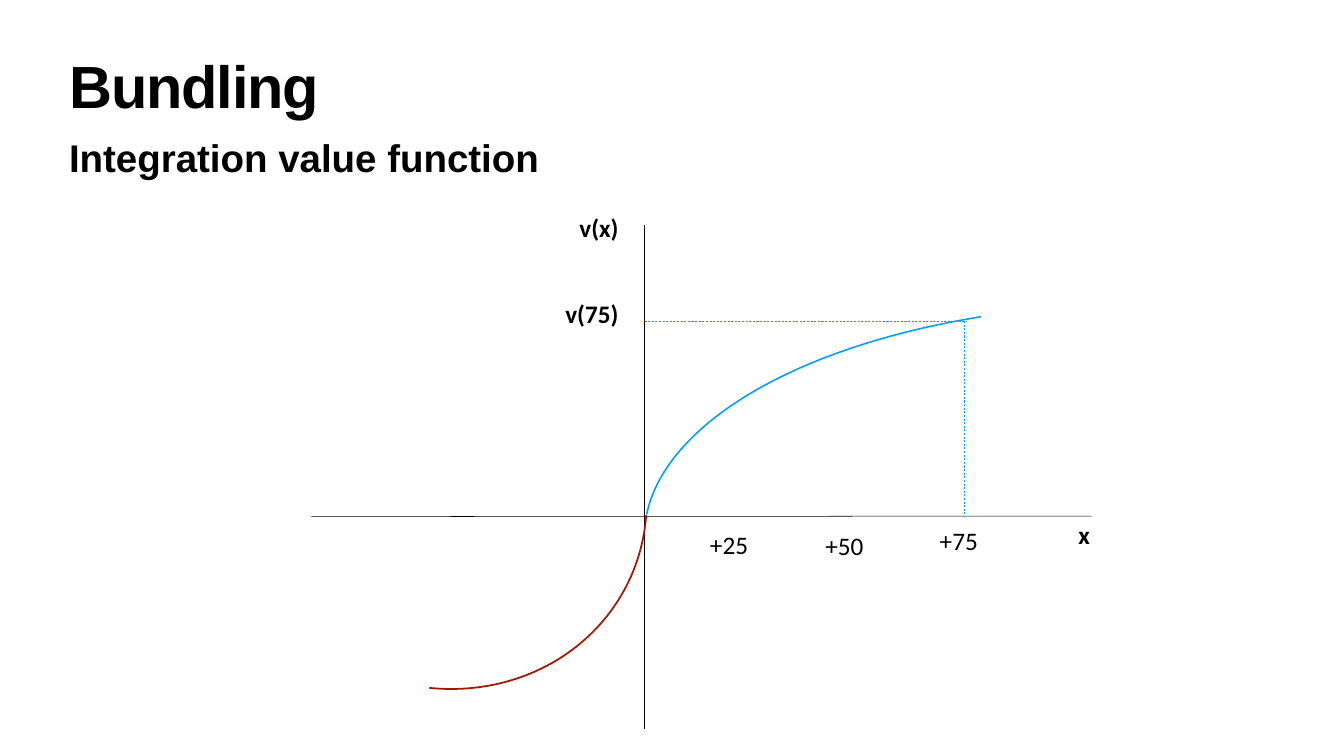
import pptx
import pptx.util
import pptx.dml.color
import pptx.enum.dml
import pptx.enum.shapes
import pptx.enum.text
import pptx.oxml

Inches = pptx.util.Inches
Pt = pptx.util.Pt
BLACK, BLUE, RED = "000000", "009EF9", "A61500"


def color(hex_string):
    return pptx.dml.color.RGBColor.from_string(hex_string)


def add_text(slide, text, place, size, font, bold, inset=0.1, wrap=True):
    box = slide.shapes.add_textbox(*[Inches(length) for length in place])
    frame = box.text_frame
    frame.word_wrap = wrap
    frame.vertical_anchor = pptx.enum.text.MSO_ANCHOR.TOP
    frame.margin_left = frame.margin_right = Inches(inset)
    frame.margin_top = frame.margin_bottom = Inches(min(inset, 0.06) if inset < 0.1 else 0.05)
    para = frame.paragraphs[0]
    span = para.add_run()
    span.text = text
    span.font.size = Pt(size)
    span.font.name = font
    span.font.bold = bold
    span.font.color.rgb = color(BLACK)
    return para


deck = pptx.Presentation()
deck.slide_width = Inches(26.67)
deck.slide_height = Inches(15)
page = deck.slides.add_slide(deck.slide_layouts[6])

# Title and subtitle
title = add_text(page, "Bundling", (1.32, 1.18, 24.03, 1.57), 85, "Arial", True, 0.06)
title.line_spacing = 0.8
title.runs[0].font._element.set("spc", "-170")
add_text(page, "Integration value function", (1.32, 2.6, 24.03, 1.02), 55, "Arial", True, 0.05)

# Axes and the dashed guides for +75
origin_x, origin_y = 12.79, 10.24
guide_x, guide_y = 19.14, 6.37
lines = [
    (origin_x, 4.46, origin_x, 14.46, BLACK, False),
    (21.66, origin_y, 6.18, 10.25, BLACK, False),
    (guide_x, guide_y, guide_x, origin_y, BLUE, True),
    (origin_x, guide_y, 19.18, guide_y, BLUE, True),
]
for x1, y1, x2, y2, line_color, dashed in lines:
    line = page.shapes.add_connector(
        pptx.enum.shapes.MSO_CONNECTOR.STRAIGHT,
        Inches(x1), Inches(y1), Inches(x2), Inches(y2))
    line.line.color.rgb = color(line_color)
    line.line.width = Pt(0.75)
    if dashed:
        line.line.dash_style = pptx.enum.dml.MSO_LINE.DASH
    line._element.spPr.append(pptx.oxml.parse_xml(
        '<a:effectLst xmlns:a="http://schemas.openxmlformats.org/drawingml/2006/main"/>'))

# Value curves: losses in red, gains in blue
curves = [
    ((4.85, 5.58, 7.76, 8.31), 116.3, (250.47, 336.77), RED, 2.5),
    ((18.06, 0.76, 9.24, 19.79), 270, (272.61, 323.67), BLUE, 2.25),
]
for place, rotation, angles, curve_color, width in curves:
    curve = page.shapes.add_shape(
        pptx.enum.shapes.MSO_SHAPE.ARC, *[Inches(length) for length in place])
    curve.rotation = rotation
    for index, degrees in enumerate(angles):
        curve.adjustments[index] = degrees * 0.6  # 60000 units per degree, over 100000
    curve.shadow.inherit = False
    curve.fill.background()
    curve.line.color.rgb = color(curve_color)
    curve.line.width = Pt(width)

# Axis names and the value mark
for text, left, top, width in [("v(x)", 11.4, 4.16, 0.99),
                               ("v(75)", 11.12, 5.87, 1.27),
                               ("x", 21.3, 10.25, 0.43)]:
    add_text(page, text, (left, top, width, 0.71), 36, "Calibri", True, wrap=False)

# Marks along the x axis
for text, left, top in [("+25", 13.99, 10.45), ("+50", 16.28, 10.48), ("+75", 18.55, 10.38)]:
    add_text(page, text, (left, top, 1.26, 0.71), 36, "Calibri", False)

deck.save("out.pptx")
